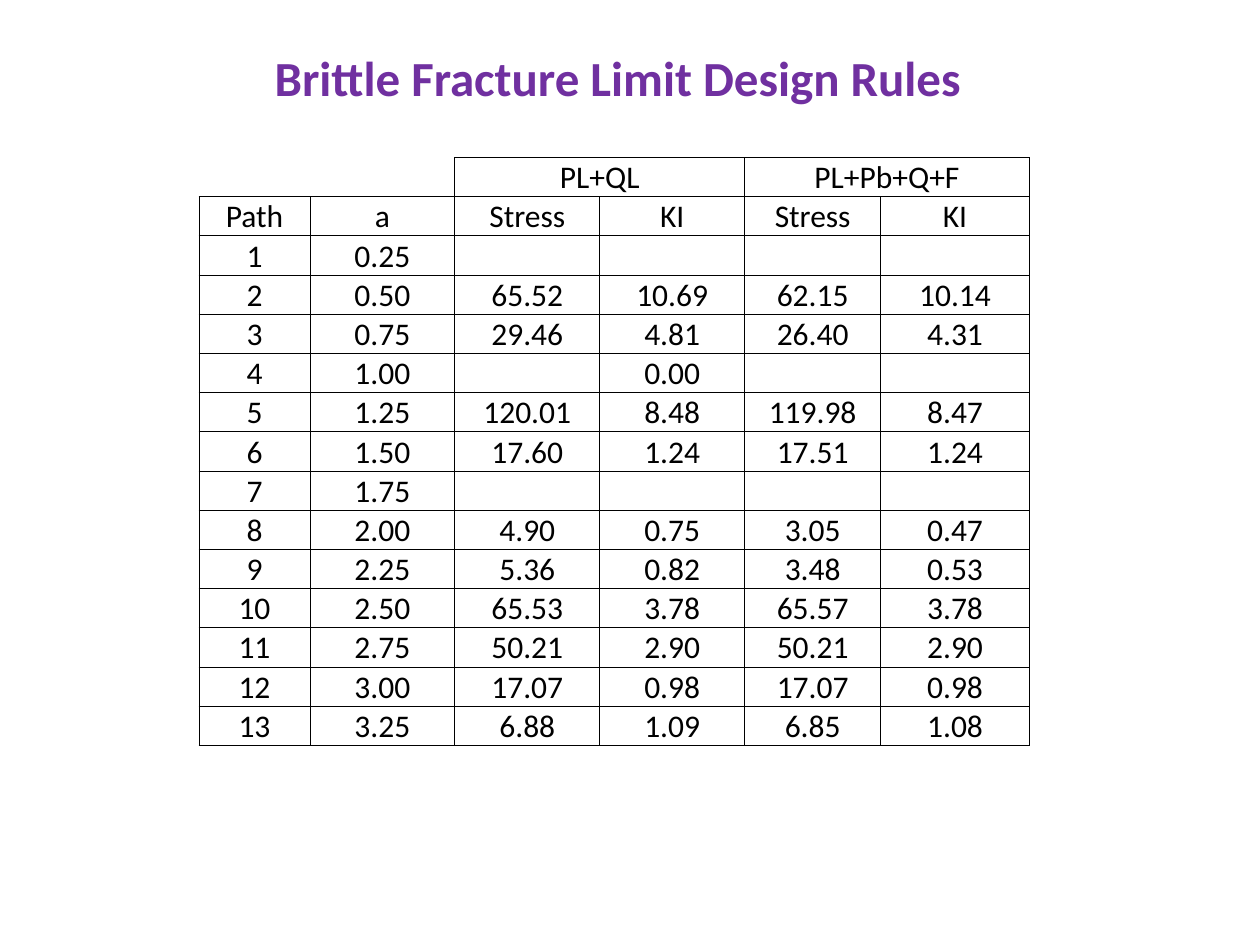
import pptx
import pptx.util
import pptx.dml.color
import pptx.enum.text
import pptx.oxml
import pptx.oxml.ns

Inches, Pt = pptx.util.Inches, pptx.util.Pt
ALIGN, ANCHOR = pptx.enum.text.PP_ALIGN, pptx.enum.text.MSO_ANCHOR

TITLE = "Brittle Fracture Limit Design Rules"
ROWS = [
    ("", "", "PL+QL", "", "PL+Pb+Q+F", ""),
    ("Path", "a", "Stress", "KI", "Stress", "KI"),
    ("1", "0.25", "", "", "", ""),
    ("2", "0.50", "65.52", "10.69", "62.15", "10.14"),
    ("3", "0.75", "29.46", "4.81", "26.40", "4.31"),
    ("4", "1.00", "", "0.00", "", ""),
    ("5", "1.25", "120.01", "8.48", "119.98", "8.47"),
    ("6", "1.50", "17.60", "1.24", "17.51", "1.24"),
    ("7", "1.75", "", "", "", ""),
    ("8", "2.00", "4.90", "0.75", "3.05", "0.47"),
    ("9", "2.25", "5.36", "0.82", "3.48", "0.53"),
    ("10", "2.50", "65.53", "3.78", "65.57", "3.78"),
    ("11", "2.75", "50.21", "2.90", "50.21", "2.90"),
    ("12", "3.00", "17.07", "0.98", "17.07", "0.98"),
    ("13", "3.25", "6.88", "1.09", "6.85", "1.08"),
]
COLUMN_WIDTHS = [0.88, 1.15, 1.15, 1.15, 1.08, 1.18]
TABLE_LEFT, TABLE_TOP, TABLE_HEIGHT = 1.58, 1.25, 4.67
GROUP_COLUMNS = (2, 4)  # first column of each two-column heading
CORNER_SIDES = {0: "B", 1: "RB"}  # borders kept in the empty top-left cells
COLORS = {"title": "7030A0", "text": "000000", "border": "000000"}
FONT = "Calibri"


def write_text(frame, text, size, color, bold=False, align=ALIGN.LEFT):
    paragraph = frame.paragraphs[0]
    paragraph.alignment = align
    if text:
        paragraph.add_run().text = text
    for part in (paragraph, *paragraph.runs):
        part.font.name = FONT
        part.font.size = Pt(size)
        part.font.bold = bold
        part.font.color.rgb = pptx.dml.color.RGBColor.from_string(color)


def set_borders(cell, sides, width=0.5):
    """Draw the named sides (from L, R, T, B) and clear the others."""
    properties = cell._tc.get_or_add_tcPr()
    for position, side in enumerate("LRTB"):
        if side in sides:
            fill = f'<a:solidFill><a:srgbClr val="{COLORS["border"]}"/></a:solidFill>'
        else:
            fill = "<a:noFill/>"
        line = pptx.oxml.parse_xml(
            f'<a:ln{side} {pptx.oxml.ns.nsdecls("a")} w="{Pt(width)}">{fill}</a:ln{side}>')
        properties.insert(position, line)


def add_title(slide):
    title = slide.shapes.title
    title.left, title.top = Inches(2.08), Inches(0.33)
    title.width, title.height = Inches(5.72), Inches(0.57)
    frame = title.text_frame
    frame.word_wrap = False
    frame.auto_size = pptx.enum.text.MSO_AUTO_SIZE.SHAPE_TO_FIT_TEXT
    frame.vertical_anchor = ANCHOR.TOP
    write_text(frame, TITLE, 28, COLORS["title"], bold=True)


def add_results_table(slide):
    table = slide.shapes.add_table(
        len(ROWS), len(COLUMN_WIDTHS), Inches(TABLE_LEFT), Inches(TABLE_TOP),
        Inches(sum(COLUMN_WIDTHS)), Inches(TABLE_HEIGHT)).table
    table.first_row = table.horz_banding = False
    for column, width in zip(table.columns, COLUMN_WIDTHS):
        column.width = Inches(width)
    for row_index, values in enumerate(ROWS):
        table.rows[row_index].height = Inches(TABLE_HEIGHT / len(ROWS))
        for column_index, value in enumerate(values):
            cell = table.cell(row_index, column_index)
            cell.margin_left = cell.margin_right = cell.margin_top = Inches(0.01)
            cell.margin_bottom = 0
            cell.vertical_anchor = ANCHOR.BOTTOM
            cell.fill.background()
            write_text(cell.text_frame, value, 18, COLORS["text"], align=ALIGN.CENTER)
            in_corner = row_index == 0 and column_index in CORNER_SIDES
            set_borders(cell, CORNER_SIDES[column_index] if in_corner else "LRTB")
    for column_index in GROUP_COLUMNS:
        table.cell(0, column_index).merge(table.cell(0, column_index + 1))


def main():
    presentation = pptx.Presentation()
    presentation.slide_width, presentation.slide_height = Inches(10), Inches(7.5)
    slide = presentation.slides.add_slide(presentation.slide_layouts[5])
    add_title(slide)
    add_results_table(slide)
    presentation.save("out.pptx")


if __name__ == "__main__":
    main()
